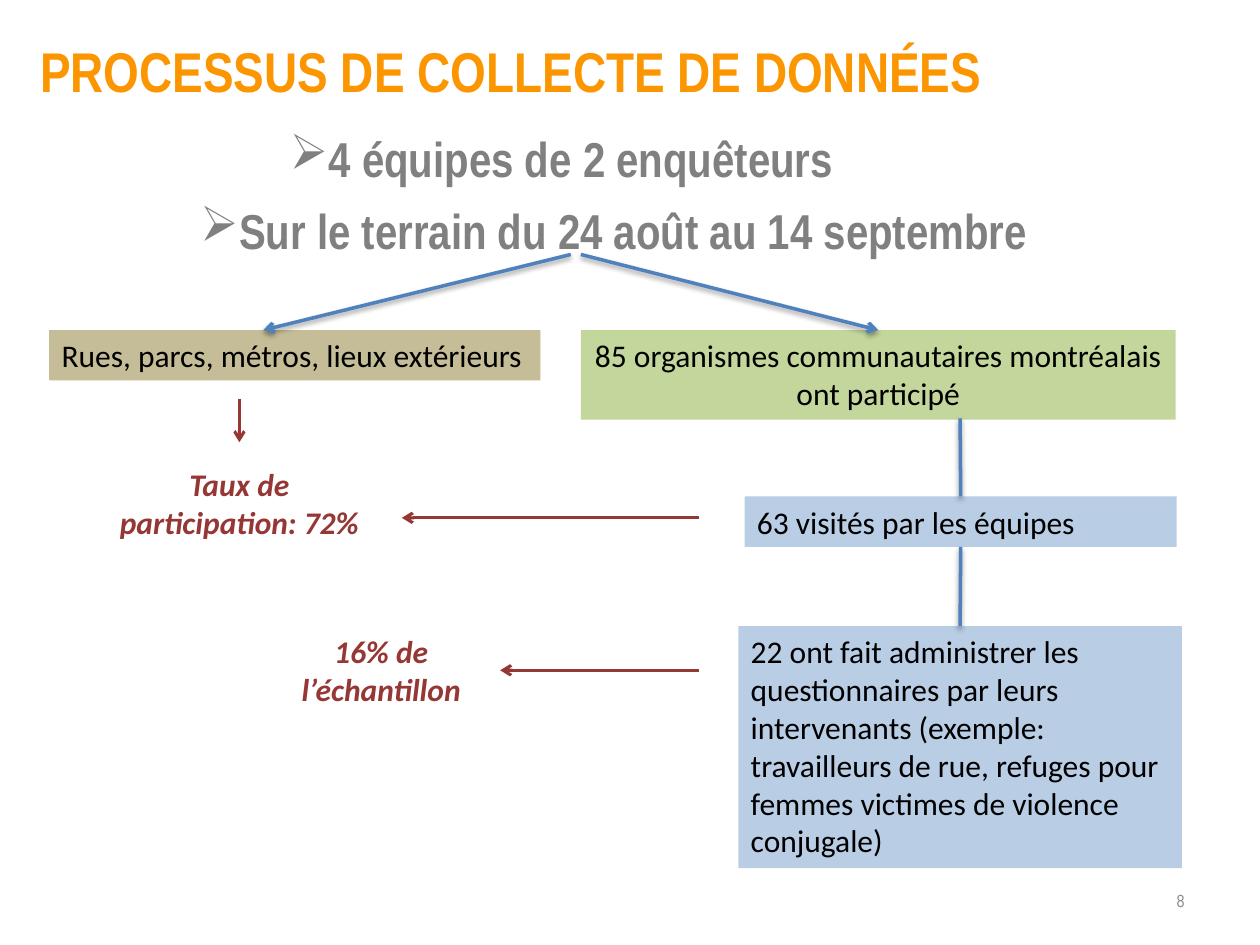
from lxml.etree import SubElement
from pptx import Presentation
from pptx.dml.color import RGBColor
from pptx.enum.shapes import MSO_CONNECTOR, MSO_SHAPE
from pptx.enum.text import MSO_ANCHOR, MSO_AUTO_SIZE, PP_ALIGN
from pptx.oxml.ns import qn
from pptx.util import Inches, Pt

TOP, BOTTOM = 0, 2


def color(hex_text):
    return RGBColor.from_string(hex_text)


class SlideBuilder:
    heading_font = "Arial Narrow"
    body_font = "Calibri"
    orange, gray, pale_gray = "FC9600", "808080", "8C8C8C"
    red, blue, black = "953735", "4F81BD", "000000"
    green_fill, blue_fill, tan_fill = "C3D69B", "B9CDE5", "C4BD97"

    def __init__(self, slide):
        self.slide = slide

    def set_text(self, shape, text, size, font, ink, align=PP_ALIGN.LEFT,
                 bold=False, italic=False, anchor=MSO_ANCHOR.TOP, grow=True):
        frame = shape.text_frame
        frame.word_wrap = True
        frame.vertical_anchor = anchor
        frame.auto_size = MSO_AUTO_SIZE.SHAPE_TO_FIT_TEXT if grow else MSO_AUTO_SIZE.NONE
        paragraph = frame.paragraphs[0]
        paragraph.text = text
        paragraph.alignment = align
        paragraph.font.size = Pt(size)
        paragraph.font.name = font
        paragraph.font.bold = bold
        paragraph.font.italic = italic
        paragraph.font.color.rgb = color(ink)
        return paragraph

    def text(self, left, top, width, height, *content, **style):
        box = self.slide.shapes.add_textbox(
            Inches(left), Inches(top), Inches(width), Inches(height))
        return self.set_text(box, *content, **style)

    def bullet(self, left, top, width, text):
        paragraph = self.text(left, top, width, 0.57, text, 28,
                              self.heading_font, self.gray, bold=True)
        properties = paragraph._p.get_or_add_pPr()
        properties.set("marL", str(Inches(0.31)))
        properties.set("indent", str(-Inches(0.31)))
        marker = SubElement(properties, qn("a:buChar"), char="➢")
        properties.insert(0, marker)

    def step(self, left, top, width, height, text, fill, align=PP_ALIGN.LEFT):
        box = self.slide.shapes.add_shape(
            MSO_SHAPE.RECTANGLE, Inches(left), Inches(top), Inches(width), Inches(height))
        box.shadow.inherit = False
        box.fill.solid()
        box.fill.fore_color.rgb = color(fill)
        box.line.fill.background()
        self.set_text(box, text, 18, self.body_font, self.black, align=align)
        return box

    def rate(self, left, top, width, text):
        self.text(left, top, width, 0.71, text, 18, self.body_font, self.red,
                  align=PP_ALIGN.CENTER, bold=True, italic=True)

    def line(self, start, end, ink, width, arrow=True, shadow=False):
        link = self.slide.shapes.add_connector(
            MSO_CONNECTOR.STRAIGHT, *map(Inches, start + end))
        link.line.color.rgb = color(ink)
        link.line.width = Pt(width)
        if arrow:
            SubElement(link.line._get_or_add_ln(), qn("a:tailEnd"), type="arrow")
        effects = SubElement(link._element.spPr, qn("a:effectLst"))
        if shadow:
            outer = SubElement(effects, qn("a:outerShdw"), blurRad=str(Pt(3.1)),
                               dist=str(Pt(1.6)), dir="5400000", rotWithShape="0")
            tint = SubElement(outer, qn("a:srgbClr"), val=self.black)
            SubElement(tint, qn("a:alpha"), val="38000")
        return link

    def flow(self, start, end, arrow=False):
        return self.line(start, end, self.blue, 2, arrow, shadow=True)

    def rate_arrow(self, start, end):
        self.line(start, end, self.red, 1.75)


def main():
    deck = Presentation()
    deck.slide_width, deck.slide_height = Inches(10), Inches(7.5)
    page = SlideBuilder(deck.slides.add_slide(deck.slide_layouts[6]))

    # Page number and title
    page.text(7.17, 6.95, 2.33, 0.4, "8", 10, page.heading_font, page.pale_gray,
              align=PP_ALIGN.RIGHT, anchor=MSO_ANCHOR.MIDDLE, grow=False)
    page.text(0.22, 0.24, 8.41, 0.64, "PROCESSUS DE COLLECTE DE DONNÉES", 32,
              page.heading_font, page.orange, bold=True)

    # Collection sites
    organizations = page.step(
        4.61, 2.62, 4.72, 0.71, "85 organismes communautaires montréalais ont participé",
        page.green_fill, PP_ALIGN.CENTER)
    administered = page.step(
        5.86, 4.97, 3.52, 1.92,
        "22 ont fait administrer les questionnaires par leurs intervenants "
        "(exemple: travailleurs de rue, refuges pour femmes victimes de violence conjugale)",
        page.blue_fill)
    visited = page.step(5.91, 3.94, 3.43, 0.4, "63 visités par les équipes", page.blue_fill)
    page.step(0.39, 2.62, 3.9, 0.4, "Rues, parcs, métros, lieux extérieurs", page.tan_fill)

    # Rates and their arrows
    page.rate(2, 4.97, 2.05, "16% de l’échantillon")
    page.rate(0.78, 3.64, 2.24, "Taux de participation: 72%")
    page.rate_arrow((1.9, 3.17), (1.9, 3.51))
    page.rate_arrow((5.55, 4.11), (3.19, 4.11))
    page.rate_arrow((5.55, 5.32), (3.97, 5.32))

    # Field work
    page.bullet(2.2, 0.97, 4.8, "4 équipes de 2 enquêteurs")
    page.bullet(1.49, 1.54, 6.98, "Sur le terrain du 24 août au 14 septembre")

    # Flow between the steps
    page.flow((4.53, 2.02), (2.09, 2.62), arrow=True)
    to_organizations = page.flow((4.61, 2.02), (6.97, 2.62), arrow=True)
    to_organizations.end_connect(organizations, TOP)
    to_visited = page.flow((7.62, 3.32), (7.62, 3.94))
    to_visited.end_connect(visited, TOP)
    to_administered = page.flow((7.62, 4.35), (7.62, 4.97))
    to_administered.begin_connect(visited, BOTTOM)
    to_administered.end_connect(administered, TOP)

    deck.save("out.pptx")


if __name__ == "__main__":
    main()
